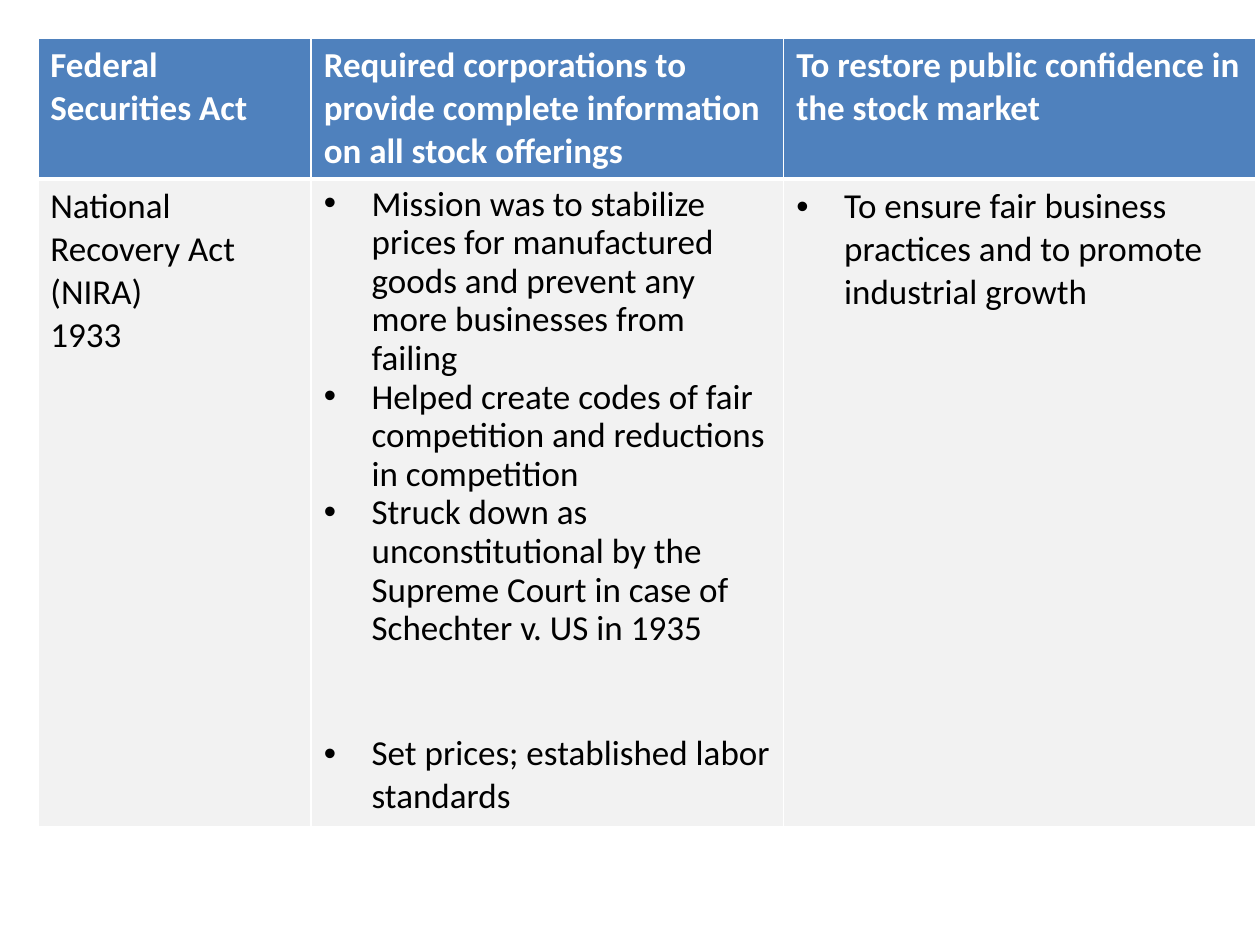
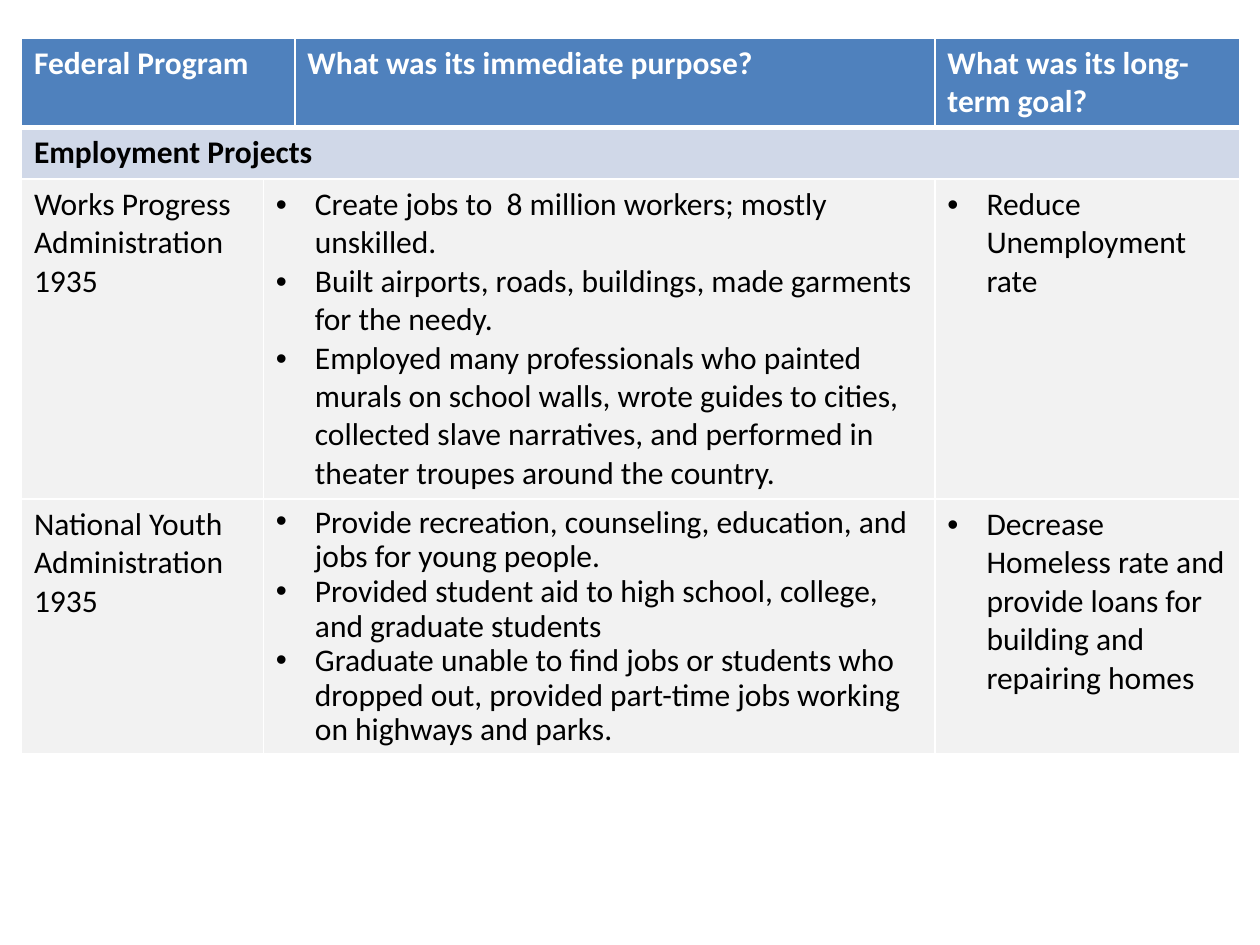
"""Build two slides of tables about New Deal laws and programs."""
from dataclasses import dataclass

from lxml import etree
from pptx import Presentation
from pptx.dml.color import RGBColor
from pptx.oxml.ns import qn
from pptx.util import Emu, Pt

PX = 9144
SLIDE_WIDTH, SLIDE_HEIGHT = 1000, 750
TABLE_TOP = 30


@dataclass(frozen=True)
class Look:
    fill: str
    ink: str
    bold: bool


@dataclass(frozen=True)
class Theme:
    font: str = "Calibri"
    bullet_font: str = "Arial"
    rule: str = "FFFFFF"
    thin: int = 1
    thick: int = 3
    law_size: int = 20
    program_size: int = 18
    tight: float = 0.9
    header: Look = Look("4F81BD", "FFFFFF", True)
    section: Look = Look("D0D8E8", "000000", True)
    body: Look = Look("F2F2F2", "000000", False)


THEME = Theme()


@dataclass(frozen=True)
class Line:
    text: str
    bulleted: bool = False
    spacing: float = 1.0
    gap: int = 0


@dataclass(frozen=True)
class Row:
    look: Look
    height: int
    spans: tuple
    cells: tuple


def px(length):
    return Emu(length * PX)


def plain(*texts):
    return [Line(text) for text in texts]


def bullets(*texts, spacing=1.0, gap=0):
    return [Line(text, True, spacing, gap) for text in texts]


def add_bullet(paragraph, indent):
    properties = paragraph._p.get_or_add_pPr()
    properties.set("marL", str(px(indent)))
    properties.set("indent", str(px(-indent)))
    etree.SubElement(properties, qn("a:buFont"), typeface=THEME.bullet_font)
    etree.SubElement(properties, qn("a:buChar"), char="•")


def set_borders(cell, top, bottom):
    properties = cell._tc.get_or_add_tcPr()
    widths = {"L": THEME.thin, "R": THEME.thin, "T": top, "B": bottom}
    for position, (side, width) in enumerate(widths.items()):
        border = etree.Element(qn(f"a:ln{side}"), w=str(Pt(width)))
        fill = etree.SubElement(border, qn("a:solidFill"))
        etree.SubElement(fill, qn("a:srgbClr"), val=THEME.rule)
        properties.insert(position, border)


def write_lines(cell, lines, look, size, indent):
    frame = cell.text_frame
    frame.text = "\n".join(line.text for line in lines)
    for paragraph, line in zip(frame.paragraphs, lines):
        if line.bulleted:
            add_bullet(paragraph, indent)
        if line.spacing != 1.0:
            paragraph.line_spacing = line.spacing
        if line.gap:
            paragraph.space_before = Pt(line.gap)
        for run in paragraph.runs:
            run.font.name = THEME.font
            run.font.size = Pt(size)
            run.font.bold = look.bold
            run.font.color.rgb = RGBColor.from_string(look.ink)


def add_act_table(slide, left, columns, rows, size, indent):
    height = sum(row.height for row in rows)
    table = slide.shapes.add_table(
        len(rows), len(columns), px(left), px(TABLE_TOP), px(sum(columns)), px(height)
    ).table
    for column, width in zip(table.columns, columns):
        column.width = px(width)
    for number, row in enumerate(rows):
        table.rows[number].height = px(row.height)
        top = THEME.thick if number == 1 else THEME.thin
        bottom = THEME.thick if number == 0 else THEME.thin
        for cell in table.rows[number].cells:
            cell.fill.solid()
            cell.fill.fore_color.rgb = RGBColor.from_string(row.look.fill)
            set_borders(cell, top, bottom)
        start = 0
        for span, lines in zip(row.spans, row.cells):
            cell = table.cell(number, start)
            if span > 1:
                cell.merge(table.cell(number, start + span - 1))
            write_lines(cell, lines, row.look, size, indent)
            start += span


def add_business_laws(slide):
    rows = [
        Row(THEME.header, 111, (1, 1, 1), (
            plain("Federal Securities Act"),
            plain("Required corporations to provide complete information on all stock offerings"),
            plain("To restore public confidence in the stock market"),
        )),
        Row(THEME.body, 514, (1, 1, 1), (
            plain("National Recovery Act (NIRA)", "1933"),
            bullets(
                "Mission was to stabilize prices for manufactured goods and prevent any more "
                "businesses from failing",
                "Helped create codes of fair competition and reductions in competition",
                "Struck down as unconstitutional by the Supreme Court in case of "
                "Schechter v. US in 1935",
                spacing=THEME.tight,
            ) + bullets("Set prices; established labor standards", gap=48),
            bullets("To ensure fair business practices and to promote industrial growth"),
        )),
    ]
    add_act_table(slide, 30, (217, 375, 375), rows, THEME.law_size, 38)


def add_employment_programs(slide):
    rows = [
        Row(THEME.header, 70, (2, 1, 1), (
            plain("Federal Program"),
            plain("What was its immediate purpose?"),
            plain("What was its long-term goal?"),
        )),
        Row(THEME.section, 41, (4,), (plain("Employment Projects"),)),
        Row(THEME.body, 254, (1, 2, 1), (
            plain("Works Progress Administration", "1935"),
            bullets(
                "Create jobs to  8 million workers; mostly unskilled.",
                "Built airports, roads, buildings, made garments for the needy.",
                "Employed many professionals who painted murals on school walls, wrote guides "
                "to cities, collected slave narratives, and performed in theater troupes "
                "around the country.",
            ),
            bullets("Reduce Unemployment rate"),
        )),
        Row(THEME.body, 202, (1, 2, 1), (
            plain("National Youth Administration", "1935"),
            bullets(
                "Provide recreation, counseling, education, and jobs for young people.",
                "Provided student aid to high school, college, and graduate students",
                "Graduate unable to find jobs or students who dropped out, provided part-time "
                "jobs working on highways and parks.",
                spacing=THEME.tight,
            ),
            bullets("Decrease Homeless rate and provide loans for building and repairing homes"),
        )),
    ]
    add_act_table(slide, 17, (192, 25, 508, 242), rows, THEME.program_size, 31)


def main():
    deck = Presentation()
    deck.slide_width, deck.slide_height = px(SLIDE_WIDTH), px(SLIDE_HEIGHT)
    blank = deck.slide_layouts[6]
    for fill_slide in (add_business_laws, add_employment_programs):
        fill_slide(deck.slides.add_slide(blank))
    deck.save("out.pptx")


if __name__ == "__main__":
    main()
